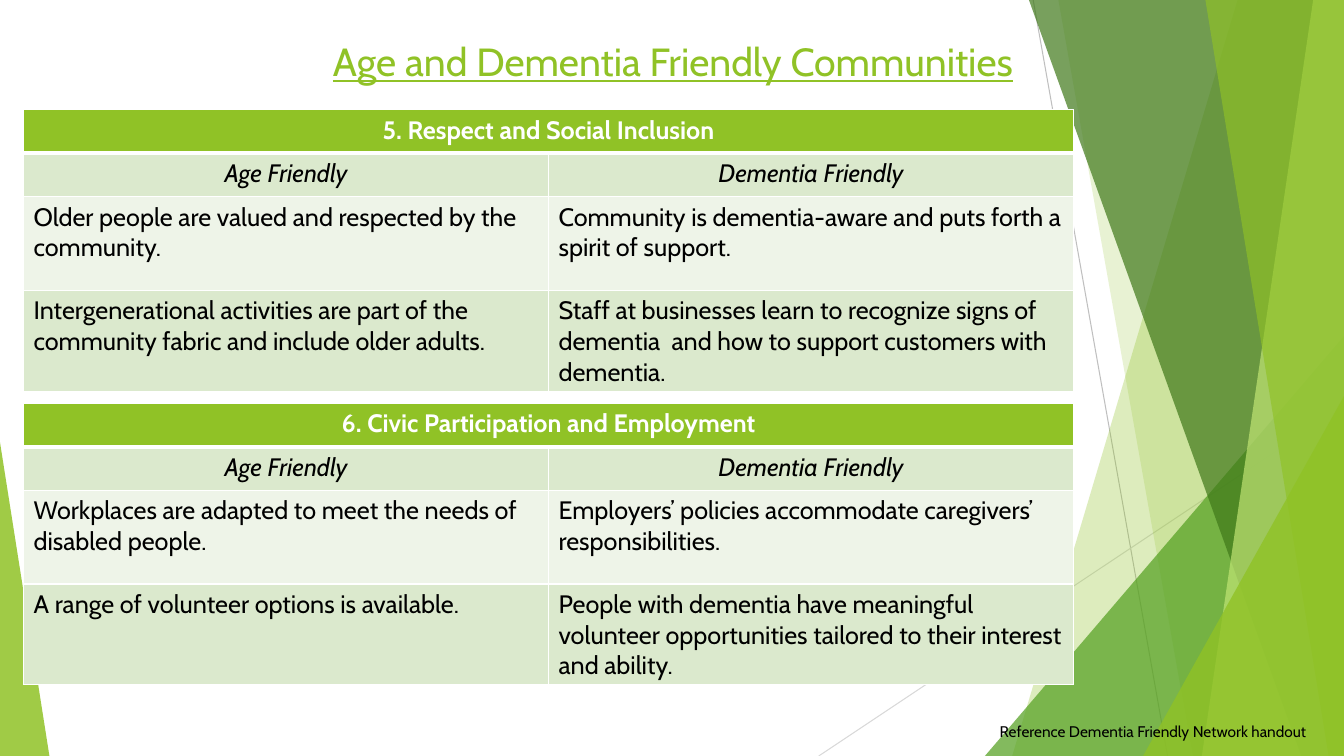
from dataclasses import dataclass

import lxml.etree
import pptx
import pptx.dml.color
import pptx.enum.dml
import pptx.enum.shapes
import pptx.enum.text
import pptx.oxml
import pptx.oxml.ns
import pptx.util

Pt = pptx.util.Pt
RGBColor = pptx.dml.color.RGBColor
Align = pptx.enum.text.PP_ALIGN
Anchor = pptx.enum.text.MSO_ANCHOR
qn = pptx.oxml.ns.qn

LIME = RGBColor(0x90, 0xC2, 0x26)
GREEN = RGBColor(0x54, 0xA0, 0x21)
FOREST = RGBColor(0x3F, 0x78, 0x19)
PALE_LIME = RGBColor(0xC0, 0xE4, 0x74)
BAND_DARK = RGBColor(0xDB, 0xE9, 0xCD)
BAND_LIGHT = RGBColor(0xEE, 0xF4, 0xE8)
GREY = RGBColor(0xBF, 0xBF, 0xBF)
LIGHT_GREY = RGBColor(0xD9, 0xD9, 0xD9)
WHITE = RGBColor(0xFF, 0xFF, 0xFF)
BLACK = RGBColor(0, 0, 0)

FONT = "Cabin"
WIDTH, HEIGHT = 960, 540
TABLE_LEFT, COLUMN_WIDTH = 16.8, 375
ROW_HEIGHTS = (31, 31, 67, 53)
ROW_FILLS = (LIME, BAND_DARK, BAND_LIGHT, BAND_DARK)


@dataclass(frozen=True)
class Ray:
    start: tuple[float, float]
    end: tuple[float, float]
    color: RGBColor


@dataclass(frozen=True)
class Shard:
    """A panel running to the right edge, with a slanted left side."""
    top_x: float
    bottom_x: float
    color: RGBColor
    opacity: int


@dataclass(frozen=True)
class Wedge:
    left: float
    top: float
    width: float
    apex: float
    color: RGBColor
    opacity: int


@dataclass(frozen=True)
class Domain:
    top: float
    heading: str
    practices: tuple[tuple[str, str], ...]


# Background pieces, from back to front
BACKGROUND = (
    Ray((738, 0), (834, HEIGHT), GREY),
    Ray((WIDTH, 290), (584.8, HEIGHT), LIGHT_GREY),
    Shard(884, 723, LIME, 30),
    Shard(756, 852, LIME, 20),
    Wedge(703.5, 240, 256.5, 1, GREEN, 72),
    Shard(735, 929.5, FOREST, 70),
    Shard(938, 858.5, PALE_LIME, 70),
    Shard(861, 949, LIME, 65),
    Wedge(816.5, 283, 143.5, 1, LIME, 80),
    Wedge(0, 316, 35.3, 0, LIME, 85),
)

DOMAINS = (
    Domain(78.5, "5. Respect and Social Inclusion", (
        ("Older people are valued and respected by the community.",
         "Community is dementia-aware and puts forth a spirit of support."),
        ("Intergenerational activities are part of the community fabric and include older adults.",
         "Staff at businesses learn to recognize signs of dementia  and how to support customers with dementia."),
    )),
    Domain(288.2, "6. Civic Participation and Employment", (
        ("Workplaces are adapted to meet the needs of disabled people.",
         "Employers’ policies accommodate caregivers’ responsibilities."),
        ("A range of volunteer options is available.",
         "People with dementia have meaningful volunteer opportunities tailored to their interest and ability."),
    )),
)


def write_text(frame, text: str, *, size: float = 18, color: RGBColor = BLACK,
               align=Align.LEFT, bold: bool = False, italic: bool = False,
               underline: bool = False) -> None:
    para = frame.paragraphs[0]
    para.alignment = align
    span = para.add_run()
    span.text = text
    font = span.font
    font.name, font.size = FONT, Pt(size)
    font.bold, font.italic, font.underline = bold, italic, underline
    font.color.rgb = color


def add_text_box(page, left: float, top: float, width: float, height: float):
    box = page.shapes.add_textbox(Pt(left), Pt(top), Pt(width), Pt(height))
    box.text_frame.word_wrap = True
    return box.text_frame


def paint(shape, color: RGBColor, opacity: int) -> None:
    shape.shadow.inherit = False
    shape.line.fill.background()
    shape.fill.solid()
    shape.fill.fore_color.rgb = color
    color_node = shape.fill._xPr.find(qn("a:solidFill"))[0]
    lxml.etree.SubElement(color_node, qn("a:alpha")).set("val", str(opacity * 1000))


def draw_ray(page, ray: Ray) -> None:
    line = page.shapes.add_connector(
        pptx.enum.shapes.MSO_CONNECTOR.STRAIGHT, *map(Pt, ray.start + ray.end))
    line.line.color.rgb = ray.color
    line.line.width = Pt(0.75)
    lxml.etree.SubElement(line._element.spPr, qn("a:effectLst"))


def draw_shard(page, shard: Shard) -> None:
    builder = page.shapes.build_freeform(Pt(shard.top_x), Pt(0))
    corners = ((WIDTH, 0), (WIDTH, HEIGHT), (shard.bottom_x, HEIGHT))
    builder.add_line_segments([(Pt(x), Pt(y)) for x, y in corners], close=True)
    paint(builder.convert_to_shape(), shard.color, shard.opacity)


def draw_wedge(page, wedge: Wedge) -> None:
    shape = page.shapes.add_shape(
        pptx.enum.shapes.MSO_SHAPE.ISOSCELES_TRIANGLE,
        Pt(wedge.left), Pt(wedge.top), Pt(wedge.width), Pt(HEIGHT - wedge.top))
    shape.adjustments[0] = wedge.apex
    paint(shape, wedge.color, wedge.opacity)


def set_borders(cell, row: int) -> None:
    widths = {"lnL": 1, "lnR": 1, "lnT": 3 if row == 1 else 1, "lnB": 3 if row == 0 else 1}
    properties = cell._tc.get_or_add_tcPr()
    for position, (side, width) in enumerate(widths.items()):
        border = lxml.etree.Element(qn(f"a:{side}"), w=str(Pt(width)))
        fill = lxml.etree.SubElement(border, qn("a:solidFill"))
        lxml.etree.SubElement(fill, qn("a:srgbClr")).set("val", str(WHITE))
        properties.insert(position, border)


def draw_domain(page, domain: Domain) -> None:
    table = page.shapes.add_table(
        len(ROW_HEIGHTS), 2, Pt(TABLE_LEFT), Pt(domain.top),
        Pt(2 * COLUMN_WIDTH), Pt(sum(ROW_HEIGHTS))).table
    for column in table.columns:
        column.width = Pt(COLUMN_WIDTH)
    rows = ((domain.heading, ""), ("Age Friendly", "Dementia Friendly"), *domain.practices)
    for row, texts in enumerate(rows):
        table.rows[row].height = Pt(ROW_HEIGHTS[row])
        for column, text in enumerate(texts):
            cell = table.cell(row, column)
            cell.fill.solid()
            cell.fill.fore_color.rgb = ROW_FILLS[row]
            set_borders(cell, row)
            if text:
                write_text(cell.text_frame, text, color=WHITE if row == 0 else BLACK,
                           align=Align.CENTER if row < 2 else Align.LEFT,
                           bold=row == 0, italic=row == 1)
    table.cell(0, 0).merge(table.cell(0, 1))


def main() -> None:
    deck = pptx.Presentation()
    deck.slide_width, deck.slide_height = Pt(WIDTH), Pt(HEIGHT)
    page = deck.slides.add_slide(deck.slide_layouts[6])

    # Background
    painters = {Ray: draw_ray, Shard: draw_shard, Wedge: draw_wedge}
    for piece in BACKGROUND:
        painters[type(piece)](page, piece)

    # Title and reference
    title = add_text_box(page, 16.8, 21.6, 713.5, 44)
    title.vertical_anchor = Anchor.MIDDLE
    write_text(title, "Age and Dementia Friendly Communities", size=28,
               color=LIME, align=Align.RIGHT, underline=True)
    reference = add_text_box(page, 707, 512.5, 266.5, 21)
    write_text(reference, "Reference Dementia Friendly Network handout", size=11)

    # Tables
    for domain in DOMAINS:
        draw_domain(page, domain)

    deck.save("out.pptx")


if __name__ == "__main__":
    main()
